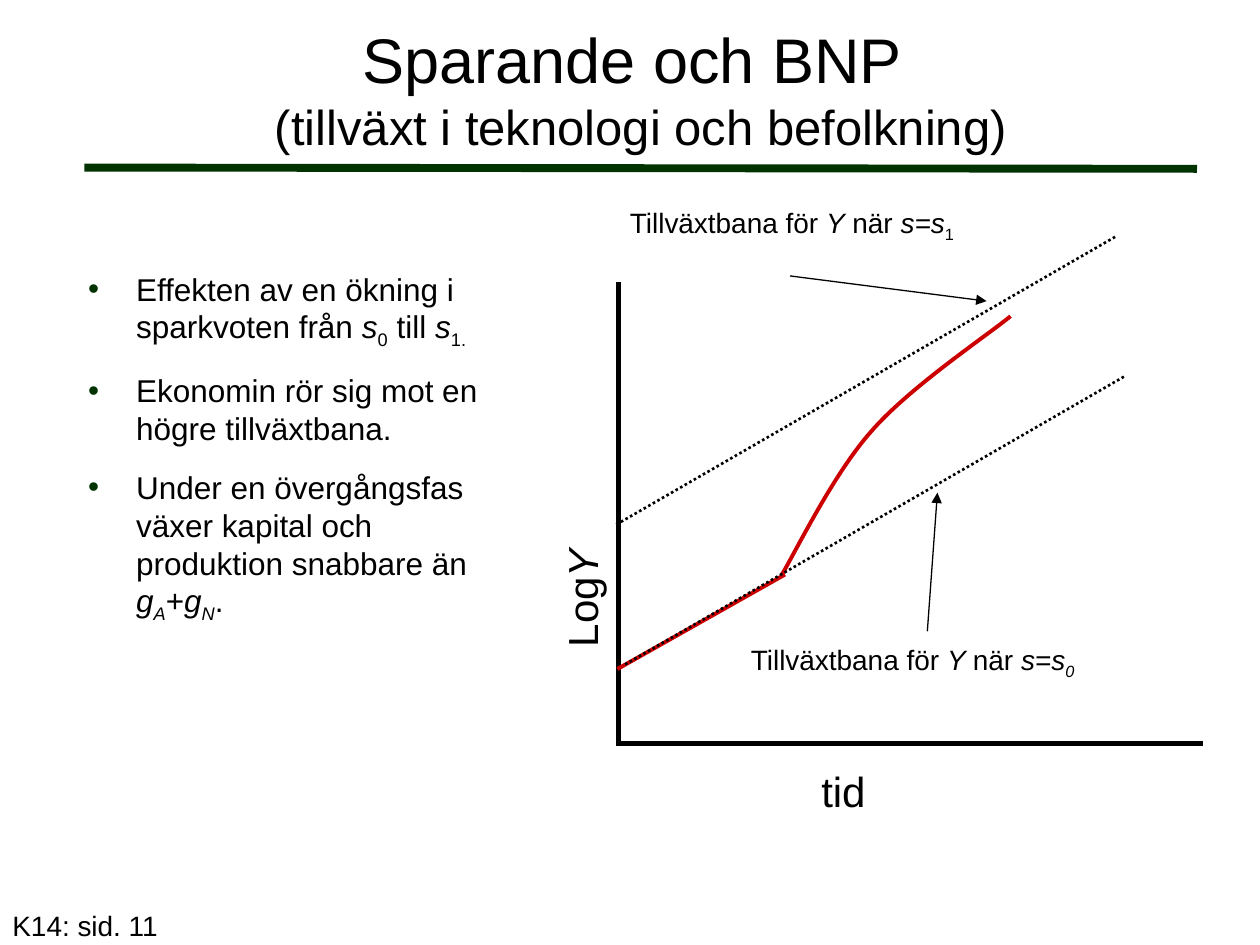
from lxml import etree
from pptx import Presentation, util as u
from pptx.dml.color import RGBColor
from pptx.enum import dml, shapes, text
from pptx.oxml import ns

COLORS = {"ink": "000000", "paper": "FFFFFF", "green": "003300", "red": "CC0000"}
FONT = "Arial"
COLUMNS, ROWS = 100, 75

TITLE = [("Sparande och BNP ", 36), ("(tillväxt i teknologi och befolkning)", 28)]
BULLETS = [
    [("Effekten av en ökning i sparkvoten från ", ""), ("s", "italic"), ("0", "sub"),
     (" till ", ""), ("s", "italic"), ("1.", "sub")],
    [("Ekonomin rör sig mot en högre tillväxtbana.", "")],
    [("Under en övergångsfas växer kapital och produktion snabbare än ", ""),
     ("g", "italic"), ("A", "italic sub"), ("+", ""), ("g", "italic"),
     ("N", "italic sub"), (".", "")],
]
TITLE_AREA = (6.7, 0.8, 88.3, 12.4)
BULLET_AREA = (6, 20.9, 36.1, 34.7)
AXIS_LABELS = [
    ((64.2, 60.3, 14, 5), 0, [("tid", "")]),
    ((30.4, 34.1, 31.5, 5), 270, [("Log", ""), ("Y", "italic")]),
]
PATH_LABELS = [
    ((59.6, 51, 35.2, 2.7), [("Tillväxtbana för ", ""), ("Y ", "italic"), ("när ", ""),
                             ("s=s", "italic"), ("0", "italic sub")]),
    ((50, 16.3, 41.7, 2.7), [("Tillväxtbana för ", ""), ("Y", "italic"), (" när ", ""),
                             ("s=s", "italic"), ("1", "sub")]),
]
FOOTER_AREA = (0, 71.6, 20.8, 3.7)
FOOTER = [("K14: sid. 11", "")]

TITLE_RULE = ((6.7, 13.3), (95, 13.4), "green", 4.5, "")
AXES = [
    ((49.1, 22.4), (49.1, 59.2), "ink", 3, ""),
    ((49.1, 59), (95.5, 59), "ink", 3, ""),
]
INITIAL_GROWTH = ((62.3, 45.6), (49, 53.1), "red", 2.25, "")
GROWTH_PATHS = [
    ((88.5, 18.8), (48.8, 41.7), "ink", 1.5, "dots"),
    ((89.2, 29.9), (49.5, 52.8), "ink", 1.5, "dots"),
]
POINTERS = [
    ((73.6, 50.1), (74.4, 39.1), "ink", 0.75, "arrow"),
    ((62.7, 21.9), (78.3, 23.9), "ink", 0.75, "arrow"),
]
TRANSITION = [(62, 45.7), (63.2, 43.7), (66.1, 37.7), (69.1, 34.3),
              (72.1, 30.8), (78.4, 26.6), (80.2, 25.1)]

deck = Presentation()
deck.slide_width, deck.slide_height = u.Inches(10), u.Inches(7.5)
page = deck.slides.add_slide(deck.slide_layouts[1])


def across(columns):
    return round(deck.slide_width * columns / COLUMNS)


def down(rows):
    return round(deck.slide_height * rows / ROWS)


def area(left, top, width, height):
    return across(left), down(top), across(width), down(height)


def color(name):
    return RGBColor.from_string(COLORS[name])


def move(box, place):
    box.left, box.top, box.width, box.height = area(*place)


def add_span(para, words, size, style=""):
    span = para.add_run()
    span.text = words
    span.font.name, span.font.size = FONT, u.Pt(size)
    span.font.color.rgb = color("ink")
    span.font.italic = "italic" in style
    if "sub" in style:
        span.font._element.set("baseline", "-25000")


def add_spans(para, spans, size):
    for words, style in spans:
        add_span(para, words, size, style)


def prepare(box, anchor=text.MSO_ANCHOR.TOP):
    frame = box.text_frame
    frame.word_wrap = True
    frame.auto_size = text.MSO_AUTO_SIZE.NONE
    frame.vertical_anchor = anchor
    return frame


def add_text(place, spans, size, inset=True):
    box = page.shapes.add_textbox(*area(*place))
    frame = prepare(box)
    if not inset:
        frame.margin_left = frame.margin_right = frame.margin_top = frame.margin_bottom = 0
    add_spans(frame.paragraphs[0], spans, size)
    return box


def add_line(start, end, name, width, style):
    line = page.shapes.add_connector(shapes.MSO_CONNECTOR.STRAIGHT, across(start[0]),
                                     down(start[1]), across(end[0]), down(end[1]))
    line.line.color.rgb = color(name)
    line.line.width = u.Pt(width)
    if style == "dots":
        line.line.dash_style = dml.MSO_LINE.ROUND_DOT
    if style == "arrow":
        etree.SubElement(line.line._get_or_add_ln(), ns.qn("a:tailEnd"), type="triangle")
    etree.SubElement(line._element.spPr, ns.qn("a:effectLst"))


def add_curve(points, name, width):
    (x, y), *rest = [(across(x), down(y)) for x, y in points]
    builder = page.shapes.build_freeform(x, y)
    builder.add_line_segments(rest, close=False)
    curve = builder.convert_to_shape()
    curve.shadow.inherit = False
    curve.fill.background()
    curve.line.color.rgb = color(name)
    curve.line.width = u.Pt(width)
    outline = next(curve._element.iter(ns.qn("a:path")))
    steps = outline.findall(ns.qn("a:lnTo"))
    for first in range(0, len(steps), 3):
        bend = etree.SubElement(outline, ns.qn("a:cubicBezTo"))
        for step in steps[first:first + 3]:
            bend.append(step[0])
            outline.remove(step)


def add_bullet(para):
    para.space_before = u.Pt(12)
    props = para._p.get_or_add_pPr()
    props.set("marL", str(u.Inches(0.38)))
    props.set("indent", str(-u.Inches(0.38)))
    tint = etree.SubElement(props, ns.qn("a:buClr"))
    etree.SubElement(tint, ns.qn("a:srgbClr"), val=COLORS["green"])
    etree.SubElement(props, ns.qn("a:buChar"), char="•")


add_line(*TITLE_RULE)

title, body = page.placeholders
move(title, TITLE_AREA)
heading = prepare(title, text.MSO_ANCHOR.MIDDLE).paragraphs[0]
heading.alignment = text.PP_ALIGN.CENTER
for number, (words, size) in enumerate(TITLE):
    if number:
        heading.add_line_break()
    add_span(heading, words, size)

move(body, BULLET_AREA)
frame = prepare(body)
for number, spans in enumerate(BULLETS):
    para = frame.add_paragraph() if number else frame.paragraphs[0]
    add_bullet(para)
    add_spans(para, spans, 18)

for place, turn, spans in AXIS_LABELS:
    label = add_text(place, spans, 24)
    label.rotation = turn
    label.fill.solid()
    label.fill.fore_color.rgb = color("paper")

for axis in AXES:
    add_line(*axis)
add_curve(TRANSITION, "red", 2.25)
for line in [INITIAL_GROWTH] + GROWTH_PATHS + POINTERS:
    add_line(*line)
for place, spans in PATH_LABELS:
    add_text(place, spans, 16, inset=False)
add_text(FOOTER_AREA, FOOTER, 16)

deck.save("out.pptx")
